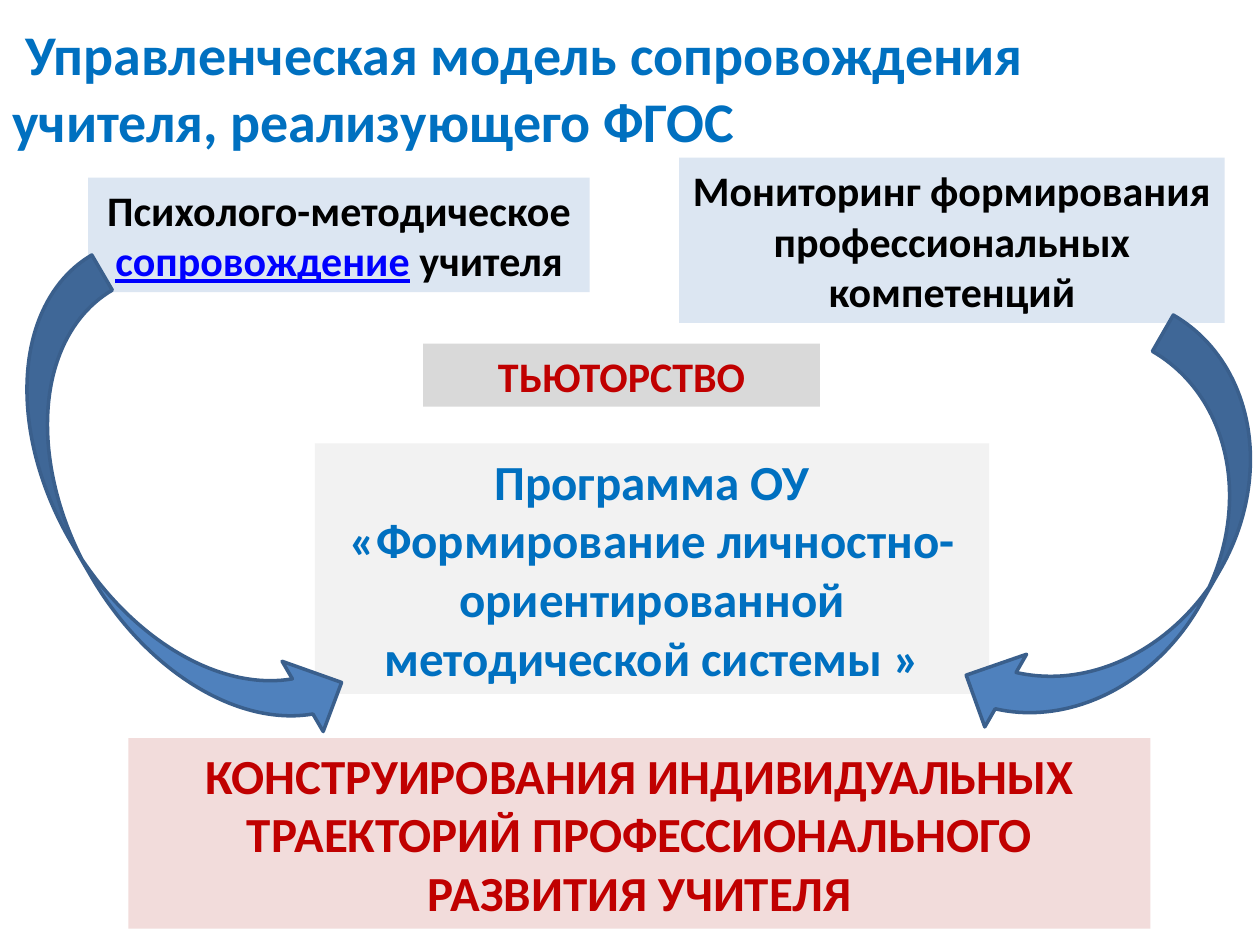
"""Build the slide on the management model of teacher support."""
from dataclasses import dataclass

from pptx import Presentation
from pptx.dml.color import RGBColor
from pptx.enum.shapes import MSO_SHAPE
from pptx.enum.text import MSO_ANCHOR, PP_ALIGN
from pptx.util import Cm, Pt


@dataclass(frozen=True)
class Theme:
    font: str = "Calibri"
    title: int = 32
    large: int = 28
    small: int = 24
    blue: str = "0070C0"
    red: str = "C00000"
    black: str = "000000"
    link: str = "0000FF"
    pale: str = "DCE6F2"
    light: str = "F2F2F2"
    grey: str = "D9D9D9"
    pink: str = "F2DCDB"
    arrow: str = "4F81BD"
    edge: str = "3A5F8C"


theme = Theme()
rgb = RGBColor.from_string

deck = Presentation()
deck.slide_width, deck.slide_height = Cm(25.4), Cm(19.05)
slide = deck.slides.add_slide(deck.slide_layouts[6])

left, center = PP_ALIGN.LEFT, PP_ALIGN.CENTER
boxes = [
    ((0, 0, 24.2, 3.5), None, left, theme.title, theme.blue,
     [[" Управленческая модель сопровождения учителя, реализующего ФГОС"]]),
    ((13.69, 3.18, 11, 3.33), theme.pale, center, theme.small, theme.black,
     [["Мониторинг формирования профессиональных компетенций"]]),
    ((6.35, 8.94, 13.59, 5.05), theme.light, center, theme.large, theme.blue,
     [["Программа ОУ"],
      ["«Формирование личностно-ориентированной методической системы »"]]),
    ((1.78, 3.58, 10.11, 2.31), theme.pale, center, theme.small, theme.black,
     [["Психолого-методическое ", "сопровождение", " учителя"]]),
    ((8.53, 6.93, 8, 1.27), theme.grey, center, theme.small, theme.red,
     [["ТЬЮТОРСТВО"]]),
    ((2.59, 14.88, 20.6, 3.84), theme.pink, center, theme.large, theme.red,
     [["КОНСТРУИРОВАНИЯ ИНДИВИДУАЛЬНЫХ ТРАЕКТОРИЙ ПРОФЕССИОНАЛЬНОГО "
       "РАЗВИТИЯ УЧИТЕЛЯ"]]),
]
for place, fill, align, size, color, paras in boxes:
    box = slide.shapes.add_textbox(*map(Cm, place))
    if fill:
        box.fill.solid()
        box.fill.fore_color.rgb = rgb(fill)
    frame = box.text_frame
    frame.word_wrap = True
    frame.vertical_anchor = MSO_ANCHOR.MIDDLE
    for index, parts in enumerate(paras):
        para = frame.add_paragraph() if index else frame.paragraphs[0]
        para.alignment = align
        for text in parts:
            linked = text == "сопровождение"
            run = para.add_run()
            run.text = text
            run.font.name = theme.font
            run.font.size = Pt(size)
            run.font.bold = True
            run.font.underline = linked
            run.font.color.rgb = rgb(theme.link if linked else color)

arrows = [
    (MSO_SHAPE.CURVED_RIGHT_ARROW, (1.52, 5.23, 3.28, 10.8), -30.3),
    (MSO_SHAPE.CURVED_LEFT_ARROW, (21.13, 6.58, 3.38, 9.22), 29.9),
]
for kind, place, turn in arrows:
    arrow = slide.shapes.add_shape(kind, *map(Cm, place))
    arrow.rotation = turn
    arrow.shadow.inherit = False
    arrow.fill.solid()
    arrow.fill.fore_color.rgb = rgb(theme.arrow)
    arrow.line.color.rgb = rgb(theme.edge)
    arrow.line.width = Pt(2)

deck.save("out.pptx")
